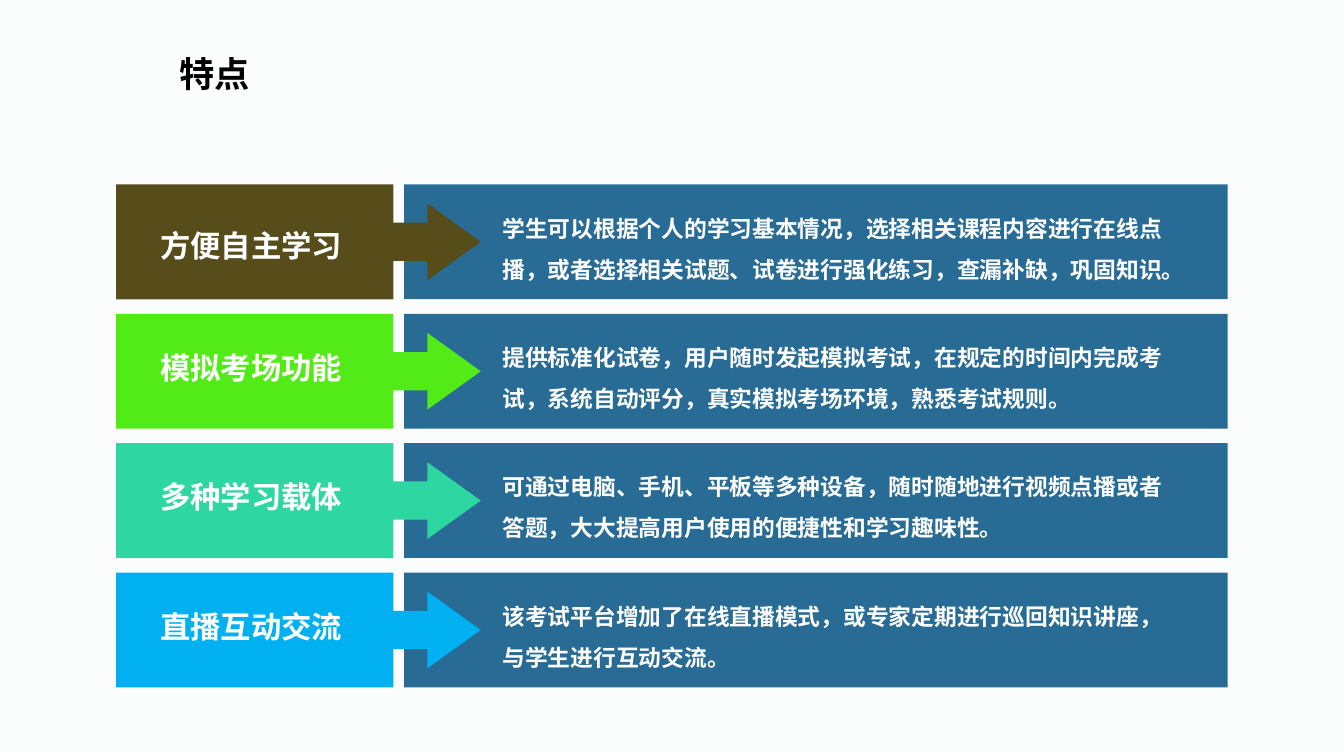
import pptx
import pptx.dml.color
import pptx.enum.shapes
import pptx.enum.text
import pptx.oxml.ns
import pptx.util
from lxml import etree
from pptx.util import Inches

RGBColor = pptx.dml.color.RGBColor
Align = pptx.enum.text.PP_ALIGN
Preset = pptx.enum.shapes.MSO_SHAPE

BACKGROUND = RGBColor(0xFB, 0xFC, 0xFC)
PANEL_BLUE = RGBColor(0x28, 0x6C, 0x95)
OLIVE = RGBColor(0x56, 0x4D, 0x1A)
GREEN = RGBColor(0x53, 0xEB, 0x17)
TEAL = RGBColor(0x2E, 0xD7, 0xA1)
SKY = RGBColor(0x00, 0xB0, 0xF0)
WHITE = RGBColor(0xFF, 0xFF, 0xFF)
BLACK = RGBColor(0x00, 0x00, 0x00)

FIRST_TOP, LAST_TOP = 1.35, 4.19
ROW_HEIGHT = 0.84
ARROW_LEFT = 0.85
# Arrow corners, measured from its top left
ARROW_OUTLINE = [
    (0, 0), (2.03, 0), (2.03, 0.28), (2.28, 0.28), (2.28, 0.14), (2.67, 0.42),
    (2.28, 0.7), (2.28, 0.56), (2.03, 0.56), (2.03, ROW_HEIGHT), (0, ROW_HEIGHT),
]

# Colour, label, label offset from the row top, description
FEATURES = [
    (OLIVE, "方便自主学习", 0.26,
     "学生可以根据个人的学习基本情况，选择相关课程内容进行在线点播，"
     "或者选择相关试题、试卷进行强化练习，查漏补缺，巩固知识。"),
    (GREEN, "模拟考场功能", 0.21,
     "提供标准化试卷，用户随时发起模拟考试，在规定的时间内完成考试，"
     "系统自动评分，真实模拟考场环境，熟悉考试规则。"),
    (TEAL, "多种学习载体", 0.21,
     "可通过电脑、手机、平板等多种设备，随时随地进行视频点播或者答题，"
     "大大提高用户使用的便捷性和学习趣味性。"),
    (SKY, "直播互动交流", 0.21,
     "该考试平台增加了在线直播模式，或专家定期进行巡回知识讲座，"
     "与学生进行互动交流。"),
]


class SlideBuilder:
    font_name = "Noto Sans CJK SC"

    def __init__(self, slide):
        self.slide = slide
        slide.background.fill.solid()
        slide.background.fill.fore_color.rgb = BACKGROUND

    def paint(self, shape, color):
        shape.shadow.inherit = False
        shape.fill.solid()
        shape.fill.fore_color.rgb = color
        shape.line.fill.background()

    def panel(self, left, top, width, height):
        box = self.slide.shapes.add_shape(
            Preset.RECTANGLE, Inches(left), Inches(top), Inches(width), Inches(height))
        self.paint(box, PANEL_BLUE)

    def arrow(self, left, top, color):
        corners = [(Inches(left + x), Inches(top + y)) for x, y in ARROW_OUTLINE]
        outline = self.slide.shapes.build_freeform(*corners[0])
        outline.add_line_segments(corners[1:], close=True)
        self.paint(outline.convert_to_shape(), color)

    def add_words(self, frame, text, size, color, align=Align.LEFT, spacing=1.0):
        frame.word_wrap = True
        paragraph = frame.paragraphs[0]
        paragraph.alignment = align
        paragraph.line_spacing = spacing
        run = paragraph.add_run()
        run.text = text
        run.font.name = self.font_name
        run.font.size = pptx.util.Pt(size)
        run.font.bold = True
        run.font.color.rgb = color
        east_asian = etree.SubElement(run._r.get_or_add_rPr(), pptx.oxml.ns.qn("a:ea"))
        east_asian.set("typeface", self.font_name)

    def text(self, left, top, width, height, text, size, **style):
        box = self.slide.shapes.add_textbox(
            Inches(left), Inches(top), Inches(width), Inches(height))
        self.add_words(box.text_frame, text, size, WHITE, **style)
        box.text_frame.auto_size = pptx.enum.text.MSO_AUTO_SIZE.SHAPE_TO_FIT_TEXT

    def title(self, text):
        box = self.slide.shapes.add_shape(
            Preset.ROUNDED_RECTANGLE, Inches(1.29), Inches(0.31), Inches(1.82), Inches(0.46))
        box.shadow.inherit = False
        box.fill.background()
        box.line.fill.background()
        frame = box.text_frame
        frame.margin_left = frame.margin_right = frame.margin_top = frame.margin_bottom = 0
        frame.vertical_anchor = pptx.enum.text.MSO_ANCHOR.MIDDLE
        self.add_words(frame, text, 18.6, BLACK)


def main():
    deck = pptx.Presentation()
    deck.slide_width, deck.slide_height = Inches(9.84), Inches(5.51)
    builder = SlideBuilder(deck.slides.add_slide(deck.slide_layouts[6]))

    builder.title("特点")
    pitch = (LAST_TOP - FIRST_TOP) / (len(FEATURES) - 1)
    for row, (color, label, label_offset, description) in enumerate(FEATURES):
        top = FIRST_TOP + row * pitch
        builder.panel(2.96, top, 6.03, ROW_HEIGHT)
        builder.arrow(ARROW_LEFT, top, color)
        builder.text(1.04, top + label_offset, 1.6, 0.37, label, 16, align=Align.CENTER)
        builder.text(3.58, top + 0.07, 5.16, 0.71, description, 12, spacing=1.5)

    deck.save("out.pptx")


if __name__ == "__main__":
    main()
